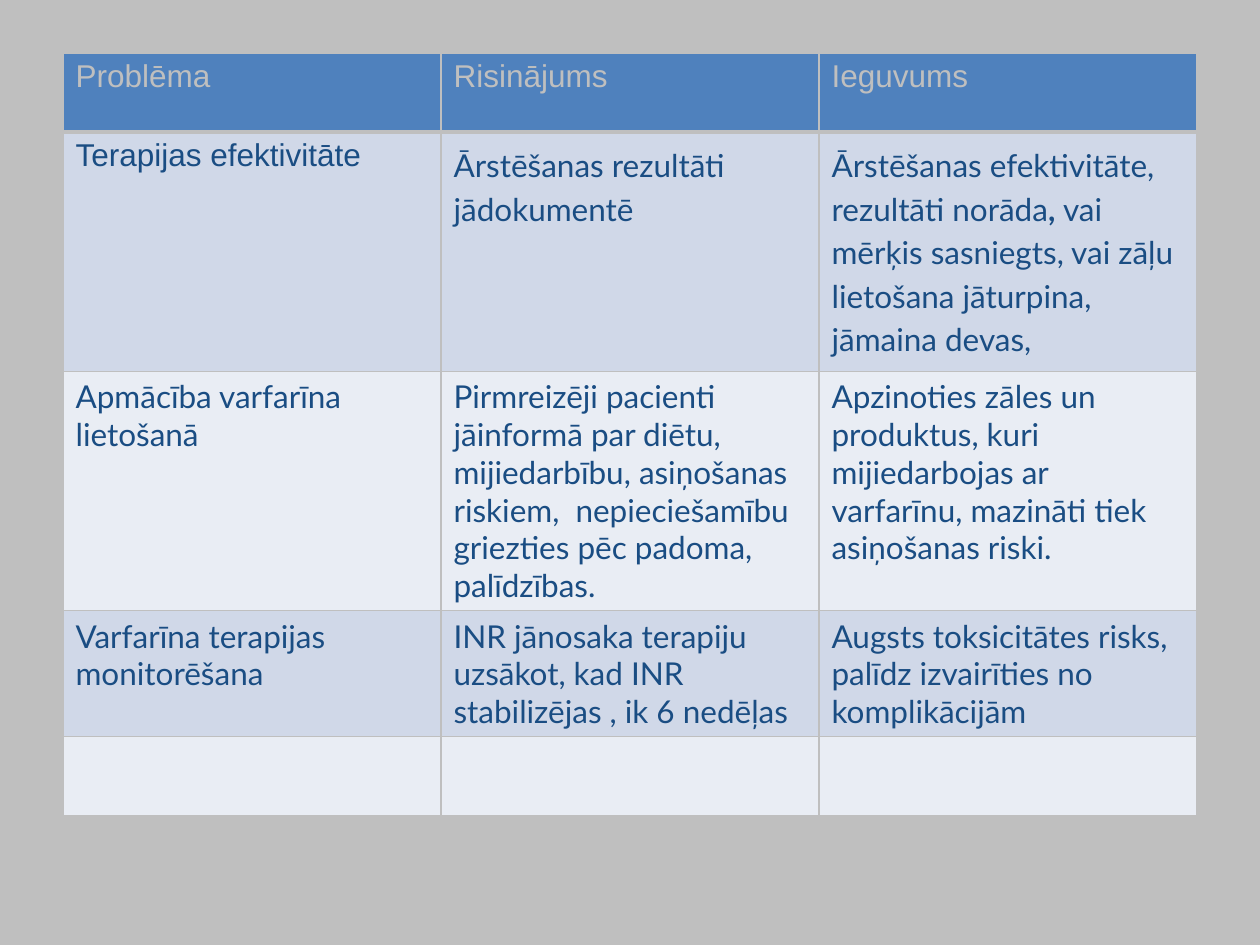
from lxml import etree
from pptx import Presentation
from pptx.dml.color import RGBColor
from pptx.oxml.ns import qn
from pptx.util import Emu, Pt

EMU_PER_PX = 914400 / 126
GREY, BLUE, NAVY = "BFBFBF", "4F81BD", "1A4D83"
BANDS = ("D0D8E8", "E9EDF4")
COLUMN_WIDTH, ROW_HEIGHT = 378, 79

HEADINGS = ["Problēma", "Risinājums", "Ieguvums"]
# Each cell is a list of (text, bold) runs
BODY = [
    [
        [("Terapijas efektivitāte", False)],
        [("Ārstēšanas rezultāti jādokumentē", False)],
        [("Ārstēšanas efektivitāte, rezultāti norāda", False), (", ", True),
         ("vai mērķis sasniegts, vai zāļu lietošana jāturpina, jāmaina devas,", False)],
    ],
    [
        [("Apmācība varfarīna lietošanā", False)],
        [("Pirmreizēji pacienti jāinformā par diētu, mijiedarbību, asiņošanas "
          "riskiem,  nepieciešamību griezties pēc padoma, palīdzības.", False)],
        [("Apzinoties zāles un produktus, kuri mijiedarbojas ar varfarīnu, "
          "mazināti tiek asiņošanas riski.", False)],
    ],
    [
        [("Varfarīna terapijas monitorēšana", False)],
        [("INR jānosaka terapiju uzsākot, kad INR stabilizējas , ik 6 nedēļas", False)],
        [("Augsts toksicitātes risks, palīdz izvairīties no komplikācijām", False)],
    ],
    [[], [], []],
]


def px(length):
    return Emu(round(length * EMU_PER_PX))


def rgb(hex_color):
    return RGBColor.from_string(hex_color)


def write_text(cell, runs, font="Lato", color=NAVY, size=18, line_spacing=None):
    paragraph = cell.text_frame.paragraphs[0]
    paragraph.font.size = Pt(size)
    if line_spacing:
        paragraph.line_spacing = line_spacing
    for text, bold in runs:
        run = paragraph.add_run()
        run.text = text
        run.font.name = font
        run.font.size = Pt(size)
        run.font.bold = bold
        run.font.color.rgb = rgb(color)


def style_cell(cell, fill, bottom_width=1):
    # Borders precede the fill in the cell properties
    properties = cell._tc.get_or_add_tcPr()
    for side, width in (("L", 1), ("R", 1), ("T", 1), ("B", bottom_width)):
        border = etree.SubElement(properties, qn("a:ln" + side), w=str(Pt(width)))
        solid = etree.SubElement(border, qn("a:solidFill"))
        etree.SubElement(solid, qn("a:srgbClr"), val=GREY)
    cell.fill.solid()
    cell.fill.fore_color.rgb = rgb(fill)


def add_care_table(slide):
    frame = slide.shapes.add_table(
        len(BODY) + 1, len(HEADINGS), px(63), px(53), px(1134), px(800))
    table = frame.table
    table.first_row = table.horz_banding = False
    for column in table.columns:
        column.width = px(COLUMN_WIDTH)
    # Rows grow to fit their text
    for row in table.rows:
        row.height = px(ROW_HEIGHT)
    frame.height = px(800)
    return table


def main():
    presentation = Presentation()
    presentation.slide_width, presentation.slide_height = px(1260), px(945)
    slide = presentation.slides.add_slide(presentation.slide_layouts[6])
    slide.background.fill.solid()
    slide.background.fill.fore_color.rgb = rgb(GREY)

    table = add_care_table(slide)

    # Header row
    for column, heading in enumerate(HEADINGS):
        cell = table.cell(0, column)
        style_cell(cell, BLUE, bottom_width=3)
        write_text(cell, [(heading, False)], font="Arial", color=GREY)

    # Body rows in alternating bands
    for row, contents in enumerate(BODY, start=1):
        for column, runs in enumerate(contents):
            cell = table.cell(row, column)
            style_cell(cell, BANDS[(row - 1) % 2])
            is_therapy = row == 1
            is_spaced = is_therapy and column > 0
            if is_spaced:
                cell.margin_top, cell.margin_bottom = px(9), px(13)
            write_text(cell, runs,
                       font="Arial" if is_therapy and column == 0 else "Lato",
                       line_spacing=1.15 if is_spaced else None)

    presentation.save("out.pptx")


if __name__ == "__main__":
    main()
